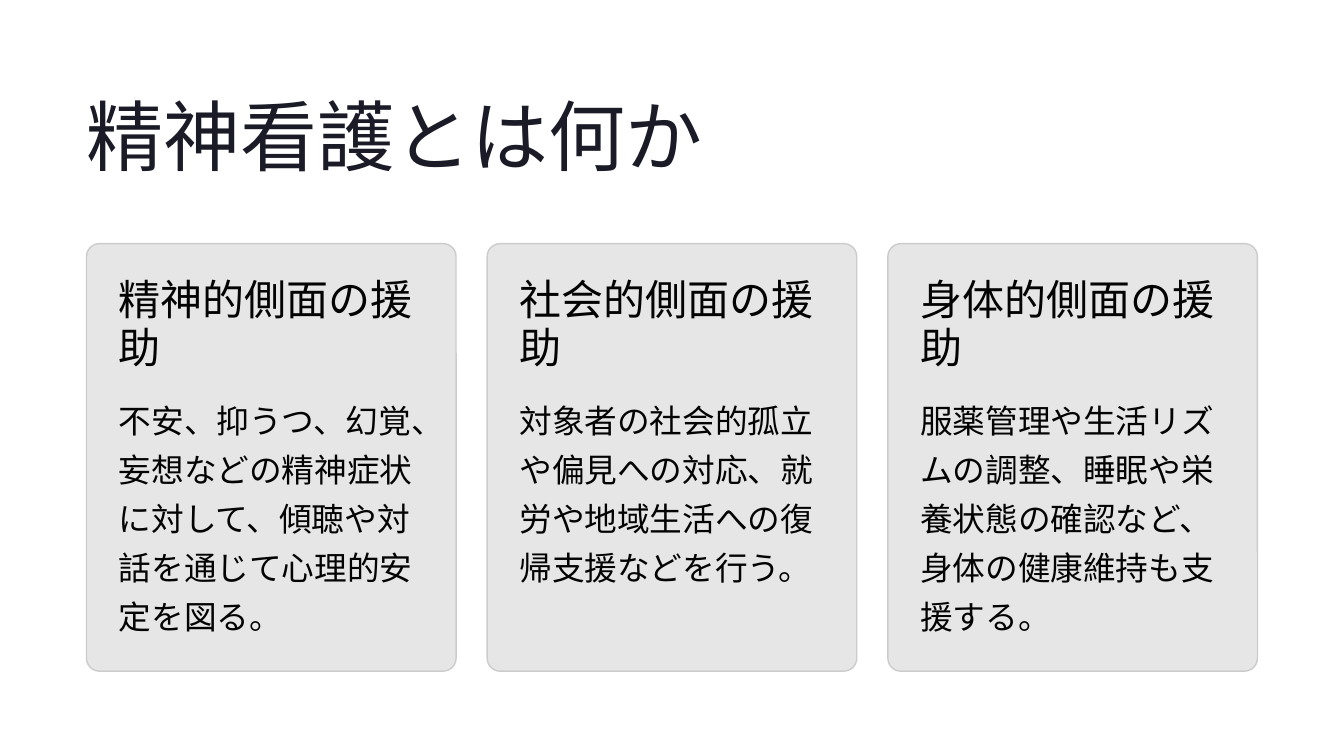
"""Build a slide that explains psychiatric nursing with three cards."""
import pptx
import pptx.dml.color
import pptx.enum.shapes
import pptx.util
from pptx.util import Inches


class Theme:
    title_color = pptx.dml.color.RGBColor.from_string("1B1B27")
    text_color = pptx.dml.color.RGBColor.from_string("030303")
    card_fill = pptx.dml.color.RGBColor.from_string("E6E6E6")
    card_line = pptx.dml.color.RGBColor.from_string("CCCCCC")
    heading_font = "Inter"
    body_font = "Cabin"
    title_size = pptx.util.Pt(66)
    heading_size = pptx.util.Pt(36)
    body_size = pptx.util.Pt(28)
    title_spacing = pptx.util.Pt(82.5)
    heading_spacing = pptx.util.Pt(41)
    body_spacing = pptx.util.Pt(42)
    card_line_width = pptx.util.Pt(1.2)


def add_text(slide, text, left, top, width, height, font, size, color, spacing, wrap=True):
    frame = slide.shapes.add_textbox(
        Inches(left), Inches(top), Inches(width), Inches(height)).text_frame
    frame.margin_left = frame.margin_right = frame.margin_top = frame.margin_bottom = 0
    frame.word_wrap = wrap
    paragraph = frame.paragraphs[0]
    paragraph.text = text
    paragraph.line_spacing = spacing
    paragraph.font.name = font
    paragraph.font.size = size
    paragraph.font.color.rgb = color


presentation = pptx.Presentation()
presentation.slide_width = Inches(16)
presentation.slide_height = Inches(9)
slide = presentation.slides.add_slide(presentation.slide_layouts[6])

margin = 1.03
add_text(slide, "精神看護とは何か", margin, 1.01, 9.2, 1.15, Theme.heading_font,
         Theme.title_size, Theme.title_color, Theme.title_spacing, wrap=False)

aspects = [
    ("精神的側面の援助",
     "不安、抑うつ、幻覚、妄想などの精神症状に対して、傾聴や対話を通じて心理的安定を図る。"),
    ("社会的側面の援助",
     "対象者の社会的孤立や偏見への対応、就労や地域生活への復帰支援などを行う。"),
    ("身体的側面の援助",
     "服薬管理や生活リズムの調整、睡眠や栄養状態の確認など、身体の健康維持も支援する。"),
]
card_top, card_width, card_height, card_gap = 2.9, 4.4, 5.09, 0.37
padding = 0.385
text_width = card_width - 2 * padding

for index, (heading, description) in enumerate(aspects):
    card_left = margin + index * (card_width + card_gap)
    card = slide.shapes.add_shape(
        pptx.enum.shapes.MSO_SHAPE.ROUNDED_RECTANGLE,
        Inches(card_left), Inches(card_top), Inches(card_width), Inches(card_height))
    card.adjustments[0] = 0.035
    card.shadow.inherit = False
    card.fill.solid()
    card.fill.fore_color.rgb = Theme.card_fill
    card.line.color.rgb = Theme.card_line
    card.line.width = Theme.card_line_width

    text_left = card_left + padding
    add_text(slide, heading, text_left, 3.29, text_width, 1.15, Theme.heading_font,
             Theme.heading_size, Theme.text_color, Theme.heading_spacing)
    add_text(slide, description, text_left, 4.66, text_width, 2.94, Theme.body_font,
             Theme.body_size, Theme.text_color, Theme.body_spacing)

presentation.save("out.pptx")
